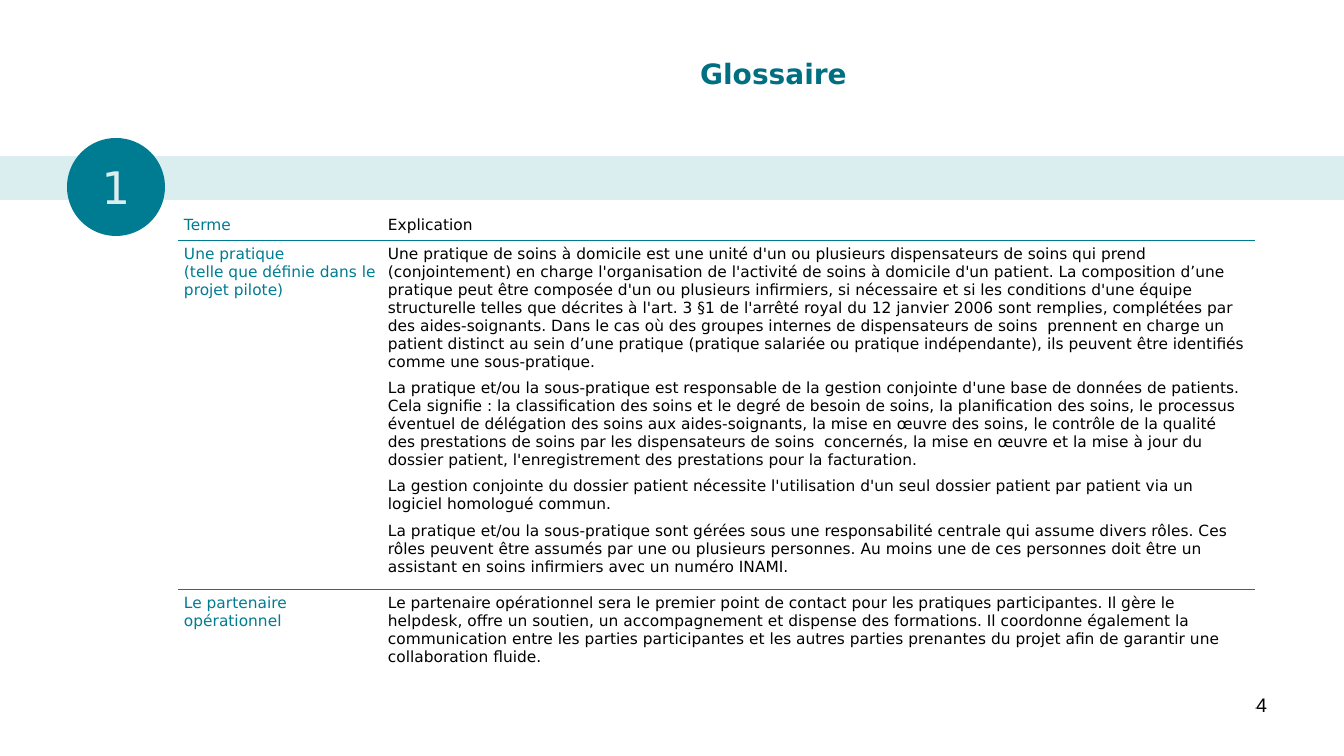
from dataclasses import dataclass

import pptx
import pptx.dml.color
import pptx.enum.shapes
import pptx.enum.text
import pptx.oxml
import pptx.oxml.ns
import pptx.util

EMU_PER_PX = 914400 / 100.8
COLOURS = {"teal": "007C92", "title": "006F82", "pale": "DAEDEF",
           "white": "FFFFFF", "black": "000000"}
SANS = "DejaVu Sans"
SHAPES = pptx.enum.shapes.MSO_SHAPE
ALIGN = pptx.enum.text.PP_ALIGN
ANCHOR = pptx.enum.text.MSO_ANCHOR


@dataclass
class Area:
    left: int
    top: int
    width: int
    height: int

    def emu(self) -> tuple:
        return tuple(map(px, (self.left, self.top, self.width, self.height)))


@dataclass
class Style:
    size: int
    colour: str
    align: ALIGN = ALIGN.LEFT
    font: str = SANS
    bold: bool = False
    space_after: int = 0


@dataclass
class Entry:
    term: str
    explanation: list[str]
    height: int
    space_after: int = 6


TABLE = Area(179, 211, 1075, 495)
COLUMN_WIDTHS = (204, 871)
ENTRIES = [
    Entry("Terme", ["Explication"], 29, 0),
    Entry("Une pratique \v(telle que définie dans le projet pilote)", [
        "Une pratique de soins à domicile est une unité d'un ou plusieurs dispensateurs de soins "
        "qui prend (conjointement) en charge l'organisation de l'activité de soins à domicile d'un "
        "patient. La composition d’une pratique peut être composée d'un ou plusieurs infirmiers, si "
        "nécessaire et si les conditions d'une équipe structurelle telles que décrites à l'art. 3 §1 "
        "de l'arrêté royal du 12 janvier 2006 sont remplies, complétées par des aides-soignants. "
        "Dans le cas où des groupes internes de dispensateurs de soins  prennent en charge un patient "
        "distinct au sein d’une pratique (pratique salariée ou pratique indépendante), ils peuvent "
        "être identifiés comme une sous-pratique.",
        "La pratique et/ou la sous-pratique est responsable de la gestion conjointe d'une base de "
        "données de patients. Cela signifie : la classification des soins et le degré de besoin de "
        "soins, la planification des soins, le processus éventuel de délégation des soins aux "
        "aides-soignants, la mise en œuvre des soins, le contrôle de la qualité des prestations de "
        "soins par les dispensateurs de soins  concernés, la mise en œuvre et la mise à jour du "
        "dossier patient, l'enregistrement des prestations pour la facturation.",
        "La gestion conjointe du dossier patient nécessite l'utilisation d'un seul dossier patient "
        "par patient via un logiciel homologué commun.",
        "La pratique et/ou la sous-pratique sont gérées sous une responsabilité centrale qui assume "
        "divers rôles. Ces rôles peuvent être assumés par une ou plusieurs personnes. Au moins une "
        "de ces personnes doit être un assistant en soins infirmiers avec un numéro INAMI.",
    ], 341),
    Entry("Le partenaire opérationnel", [
        "Le partenaire opérationnel sera le premier point de contact pour les pratiques "
        "participantes. Il gère le helpdesk, offre un soutien, un accompagnement et dispense des "
        "formations. Il coordonne également la communication entre les parties participantes et les "
        "autres parties prenantes du projet afin de garantir une collaboration fluide.",
    ], 125),
]


def px(length: int) -> int:
    return round(length * EMU_PER_PX)


def rgb(name: str) -> pptx.dml.color.RGBColor:
    return pptx.dml.color.RGBColor.from_string(COLOURS[name])


def write(frame, paragraphs: list[str], style: Style) -> None:
    frame.word_wrap = True
    for index, text in enumerate(paragraphs):
        para = frame.add_paragraph() if index else frame.paragraphs[0]
        para.text = text
        para.alignment = style.align
        para.space_after = pptx.util.Pt(style.space_after)
        para.font.name = style.font
        para.font.size = pptx.util.Pt(style.size)
        para.font.bold = style.bold
        para.font.color.rgb = rgb(style.colour)


def add_text(page, area: Area, text: str, style: Style, anchor: ANCHOR) -> None:
    box = page.shapes.add_textbox(*area.emu())
    write(box.text_frame, [text], style)
    box.text_frame.vertical_anchor = anchor


def add_filled(page, kind: SHAPES, area: Area, colour: str):
    shape = page.shapes.add_shape(kind, *area.emu())
    shape.shadow.inherit = False
    shape.fill.solid()
    shape.fill.fore_color.rgb = rgb(colour)
    shape.line.fill.background()
    return shape


def set_border(cell, side: str, colour: str, points: float) -> None:
    width = pptx.util.Pt(points)
    cell._tc.get_or_add_tcPr().append(pptx.oxml.parse_xml(
        f'<a:ln{side} {pptx.oxml.ns.nsdecls("a")} w="{width}"><a:solidFill>'
        f'<a:srgbClr val="{COLOURS[colour]}"/></a:solidFill></a:ln{side}>'))


def fill_cell(cell, paragraphs: list[str], style: Style, first: bool, last: bool) -> None:
    """Write a cell, ruled in teal against its neighbours above and below."""
    rule, edge = ("teal", 0.5), ("white", 1)
    borders = {"L": edge, "R": edge, "T": edge if first else rule, "B": edge if last else rule}
    for side, (colour, points) in borders.items():
        set_border(cell, side, colour, points)
    cell.fill.solid()
    cell.fill.fore_color.rgb = rgb("white")
    cell.margin_left = cell.margin_right = cell.margin_top = cell.margin_bottom = px(5)
    write(cell.text_frame, paragraphs, style)


def add_glossary(page) -> None:
    table = page.shapes.add_table(len(ENTRIES), len(COLUMN_WIDTHS), *TABLE.emu()).table
    table.first_row = table.horz_banding = False
    for column, width in zip(table.columns, COLUMN_WIDTHS):
        column.width = px(width)
    for index, entry in enumerate(ENTRIES):
        table.rows[index].height = px(entry.height)
        ends = index == 0, index == len(ENTRIES) - 1
        fill_cell(table.cell(index, 0), [entry.term], Style(11, "teal"), *ends)
        explanation = Style(11, "black", space_after=entry.space_after)
        fill_cell(table.cell(index, 1), entry.explanation, explanation, *ends)


def main() -> None:
    deck = pptx.Presentation()
    deck.slide_width, deck.slide_height = px(1344), px(756)
    page = deck.slides.add_slide(deck.slide_layouts[6])

    add_filled(page, SHAPES.RECTANGLE, Area(0, 156, 1344, 44), "pale")
    add_text(page, Area(270, 30, 1007, 86), "Glossaire",
             Style(20, "title", ALIGN.CENTER, bold=True), ANCHOR.MIDDLE)
    add_text(page, Area(964, 688, 313, 52), "44",
             Style(14, "black", ALIGN.RIGHT, "Arial"), ANCHOR.TOP)
    badge = add_filled(page, SHAPES.OVAL, Area(67, 138, 98, 98), "teal")
    write(badge.text_frame, ["1"], Style(32, "pale", ALIGN.CENTER))
    badge.text_frame.vertical_anchor = ANCHOR.MIDDLE
    add_glossary(page)
    deck.save("out.pptx")


if __name__ == "__main__":
    main()
